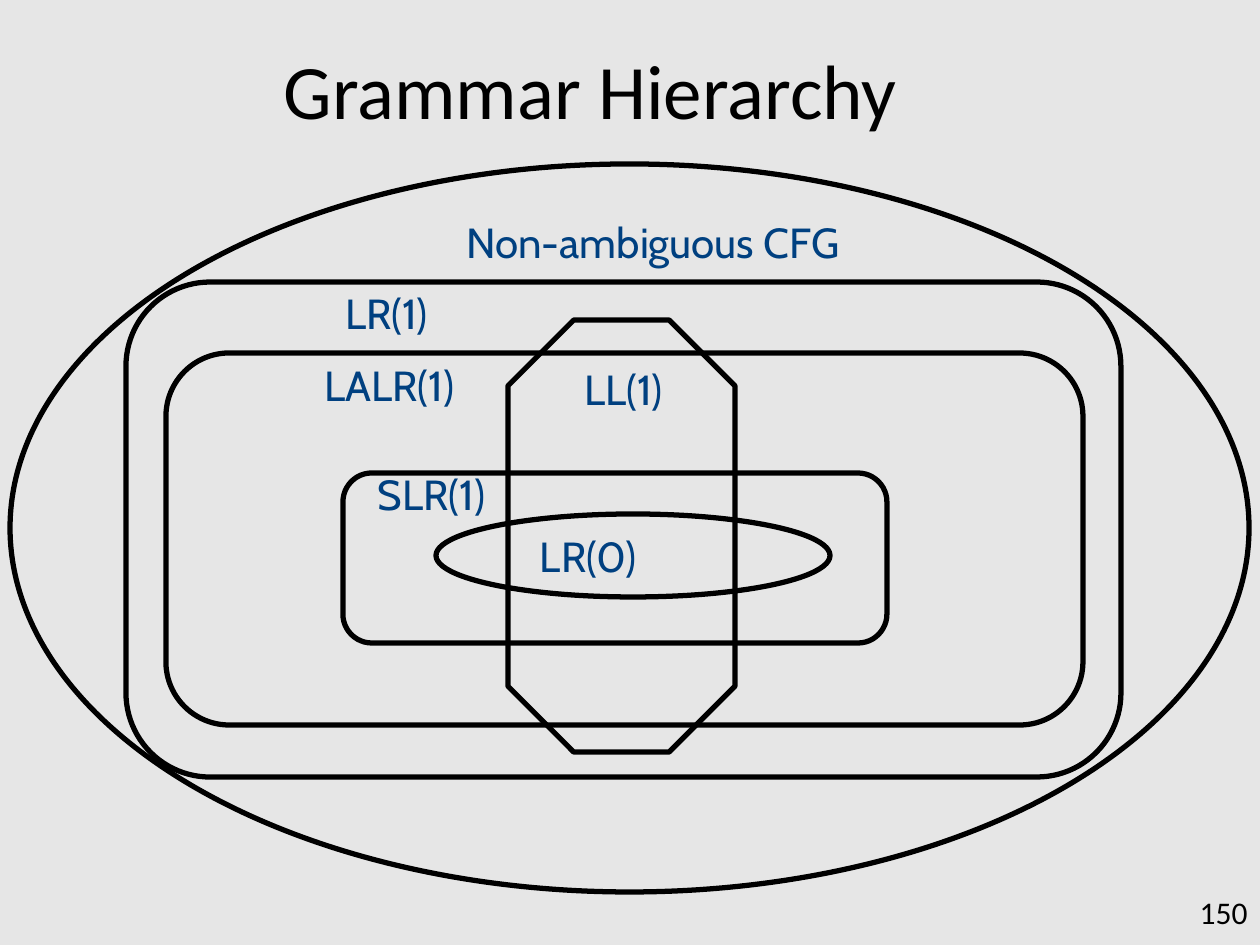
from pptx import Presentation
from pptx.dml.color import RGBColor as RGB
from pptx.enum.shapes import MSO_SHAPE as Geo
from pptx.enum.text import MSO_ANCHOR as Anchor, PP_ALIGN as Align
from pptx.util import Pt

SCALE = 914400 / 126
THEME = {
    "back": RGB(0xE6, 0xE6, 0xE6),
    "line": RGB(0, 0, 0),
    "width": Pt(3),
    "title": {"name": "Calibri", "size": Pt(44), "color": RGB(0, 0, 0)},
    "label": {"name": "Cabin", "size": Pt(24), "color": RGB(0, 0x40, 0x80)},
    "page": {"name": "Calibri", "size": Pt(18), "color": RGB(0, 0, 0)},
}


def px(*nums):
    return [round(n * SCALE) for n in nums]


def write(shape, text, style, align, anchor=Anchor.TOP):
    frame = shape.text_frame
    for key, val in {"word_wrap": True, "vertical_anchor": anchor}.items():
        setattr(frame, key, val)
    para = frame.paragraphs[0]
    para.alignment = align
    run = para.add_run()
    run.text = text
    for key, val in THEME[style].items():
        if key == "color":
            run.font.color.rgb = val
        else:
            setattr(run.font, key, val)


deck = Presentation()
deck.slide_width, deck.slide_height = px(1260, 945)
slide = deck.slides.add_slide(deck.slide_layouts[5])
slide.background.fill.solid()
slide.background.fill.fore_color.rgb = THEME["back"]
shapes = slide.shapes

title = shapes.title
for key, val in zip(("left", "top", "width", "height"), px(55, 21, 1071, 136)):
    setattr(title, key, val)
write(title, "Grammar Hierarchy", "title", Align.CENTER, Anchor.MIDDLE)

page = shapes.add_textbox(*px(998, 887, 262, 38))
write(page, "150", "page", Align.RIGHT)

classes = [
    ("Non-ambiguous CFG", Geo.OVAL, None, (10, 164, 1239, 728), (393, 210, 520, 63)),
    ("LR(1)", Geo.ROUNDED_RECTANGLE, 0.17, (126, 282, 995, 495), (186, 281, 401, 63)),
    ("LALR(1)", Geo.ROUNDED_RECTANGLE, 0.17, (166, 353, 917, 372), (189, 353, 401, 63)),
    ("SLR(1)", Geo.ROUNDED_RECTANGLE, 0.17, (343, 473, 544, 170), (231, 462, 401, 63)),
    ("LL(1)", Geo.OCTAGON, 0.29, (508, 320, 227, 432), (423, 357, 401, 63)),
    ("LR(0)", Geo.OVAL, None, (436, 514, 394, 83), (523, 524, 130, 50)),
]
for name, geo, bend, area, spot in classes:
    ring = shapes.add_shape(geo, *px(*area))
    ring.shadow.inherit = False
    ring.fill.background()
    ring.line.color.rgb = THEME["line"]
    ring.line.width = THEME["width"]
    if bend:
        ring.adjustments[0] = bend
    write(shapes.add_textbox(*px(*spot)), name, "label", Align.CENTER)

deck.save("out.pptx")
